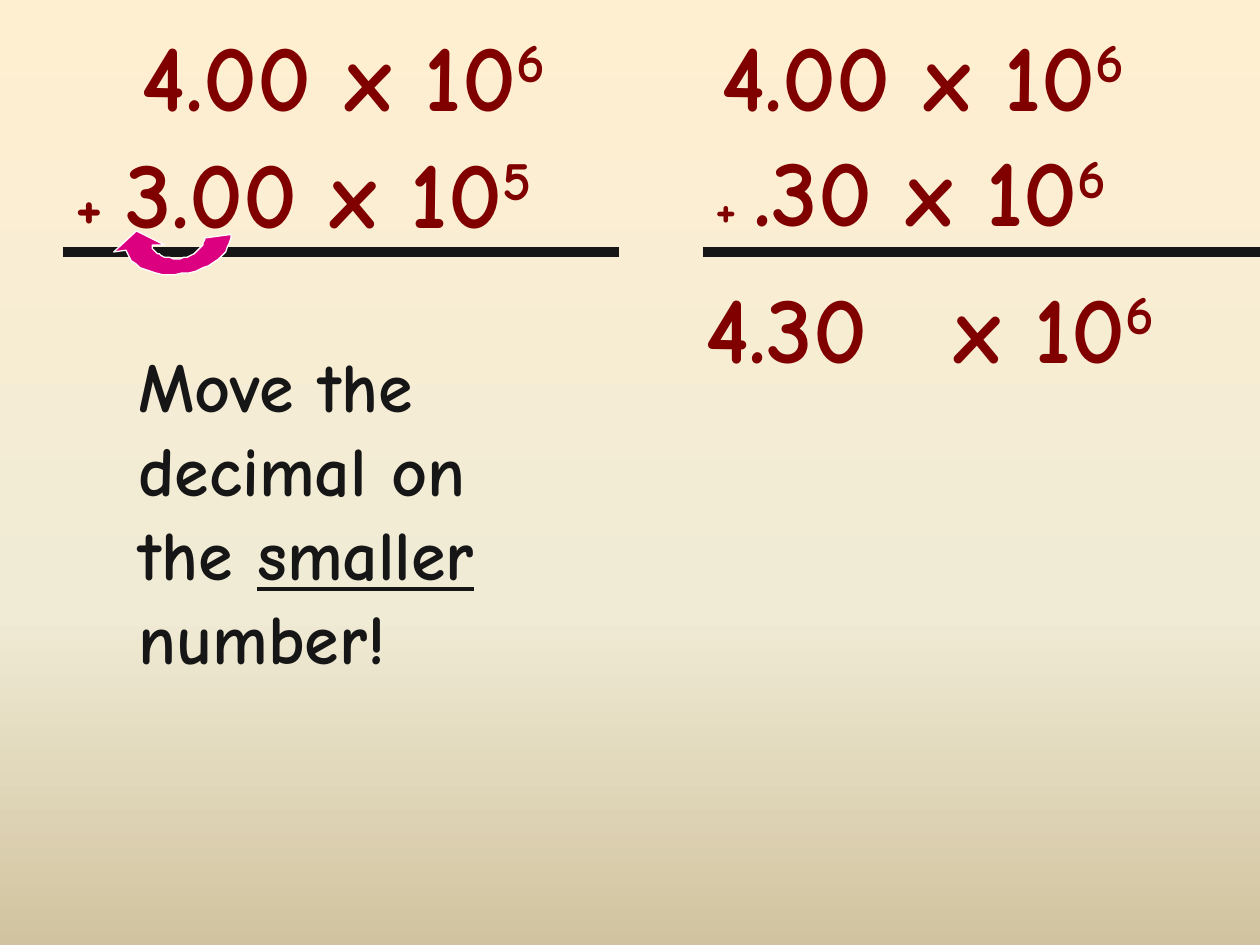
from copy import deepcopy

from pptx import Presentation
from pptx import util as u
from pptx.dml.color import RGBColor
from pptx.enum import text
from pptx.oxml import ns, xmlchemy

COLORS = {"number": "800000", "ink": "161616", "arrow": "DC0081", "edge": "FFFFFF"}
BACKGROUND = [(0, "FFEFD1"), (0.65, "F0EBD5"), (1, "D1C39F")]
BIG = {"size": 54}
POWER = {"size": 54, "baseline": "30000"}
WORDS = {"size": 40, "color": "ink"}


def bezier(start, c1, c2, end, steps=12):
    """Points along a cubic curve, without its start."""
    return [
        tuple((1 - t) ** 3 * a + 3 * (1 - t) ** 2 * t * b + 3 * (1 - t) * t * t * c + t**3 * d
              for a, b, c, d in zip(start, c1, c2, end))
        for t in (i / steps for i in range(1, steps + 1))
    ]


class SlideWriter:
    font = "Comic Neue"

    def __init__(self, slide):
        self.slide = slide

    def color(self, name):
        return RGBColor.from_string(COLORS[name])

    def background(self, stops):
        fill = self.slide.background.fill
        fill.gradient()
        fill.gradient_angle = 270
        stop_list = next(self.slide._element.iter(ns.qn("a:gsLst")))
        while len(stop_list) < len(stops):
            stop_list.append(deepcopy(stop_list[-1]))
        for stop, (position, color) in zip(fill.gradient_stops, stops):
            stop.position = position
            stop.color.rgb = RGBColor.from_string(color)

    def text(self, left, top, width, height, runs, wrap=False):
        """Each run is its words and a dict of format values."""
        frame = self.slide.shapes.add_textbox(
            *map(u.Pt, (left, top, width, height))).text_frame
        frame.word_wrap = wrap
        frame.auto_size = text.MSO_AUTO_SIZE.SHAPE_TO_FIT_TEXT
        for words, style in runs:
            run = frame.paragraphs[0].add_run()
            run.text = words
            values = {"name": self.font, "bold": True, "size": u.Pt(style["size"]),
                      "underline": style.get("underline")}
            for key, value in values.items():
                setattr(run.font, key, value)
            run.font.color.rgb = self.color(style.get("color", "number"))
            if "baseline" in style:
                run.font._element.set("baseline", style["baseline"])

    def rule(self, left, right, y):
        line = self.slide.shapes.add_connector(1, *map(u.Pt, (left, y, right, y)))
        line.line.color.rgb = self.color("ink")
        line.line.width = u.Pt(6)
        line._element.spPr.append(xmlchemy.OxmlElement("a:effectLst"))

    def outline(self, points):
        scale = u.Pt(1)
        builder = self.slide.shapes.build_freeform(*points[0], scale=scale)
        builder.add_line_segments(points[1:], close=True)
        shape = builder.convert_to_shape()
        shape.shadow.inherit = False
        shape.fill.solid()
        shape.fill.fore_color.rgb = self.color("arrow")
        shape.line.color.rgb = self.color("edge")
        shape.line.width = u.Pt(0.75)


def main():
    deck = Presentation()
    deck.slide_width, deck.slide_height = u.Pt(720), u.Pt(540)
    page = SlideWriter(deck.slides.add_slide(deck.slide_layouts[6]))
    page.background(BACKGROUND)

    line_height = 72
    first_term = [("4.00 x 10", BIG), ("6", POWER)]
    for left in (74, 405):
        page.text(left, 6, 304, line_height, first_term)
    page.text(36, 73, 341, line_height,
              [("+ ", {"size": 36}), ("3.00 x 10", BIG), ("5", POWER)])
    page.text(402, 72, 299.5, line_height,
              [("+ ", {"size": 28}), (".30 x 10", BIG), ("6", POWER)])
    for left, right in ((36, 354), (402, 720)):
        page.rule(left, right, 144)

    page.text(396, 150, 137, line_height, [("4.30", BIG)])
    page.text(538.5, 150, 157.5, line_height, [("x 10", BIG), ("6", POWER)])

    inner_left, inner_low, inner_right = (87.1, 140.4), (103, 147.6), (116.6, 136.1)
    outer_right, outer_low, outer_left = (131.8, 133.9), (104.4, 156.2), (72, 142.6)
    decimal_shift = [
        inner_left,
        *bezier(inner_left, (87.8, 145.4), (95, 148.3), inner_low),
        *bezier(inner_low, (111.6, 146.2), (117.4, 141.1), inner_right),
        outer_right,
        *bezier(outer_right, (133.2, 144), (121, 154.1), outer_low),
        *bezier(outer_low, (88.6, 159.1), (73.4, 152.6), outer_left),
        (64.8, 144), (78.5, 132.5), (94.3, 139.7),
    ]
    page.outline(decimal_shift)

    page.text(72, 192, 258, 199.5, [
        ("Move the decimal on the ", WORDS),
        ("smaller", WORDS | {"underline": True}),
        (" number!", WORDS),
    ], wrap=True)

    deck.save("out.pptx")


if __name__ == "__main__":
    main()
